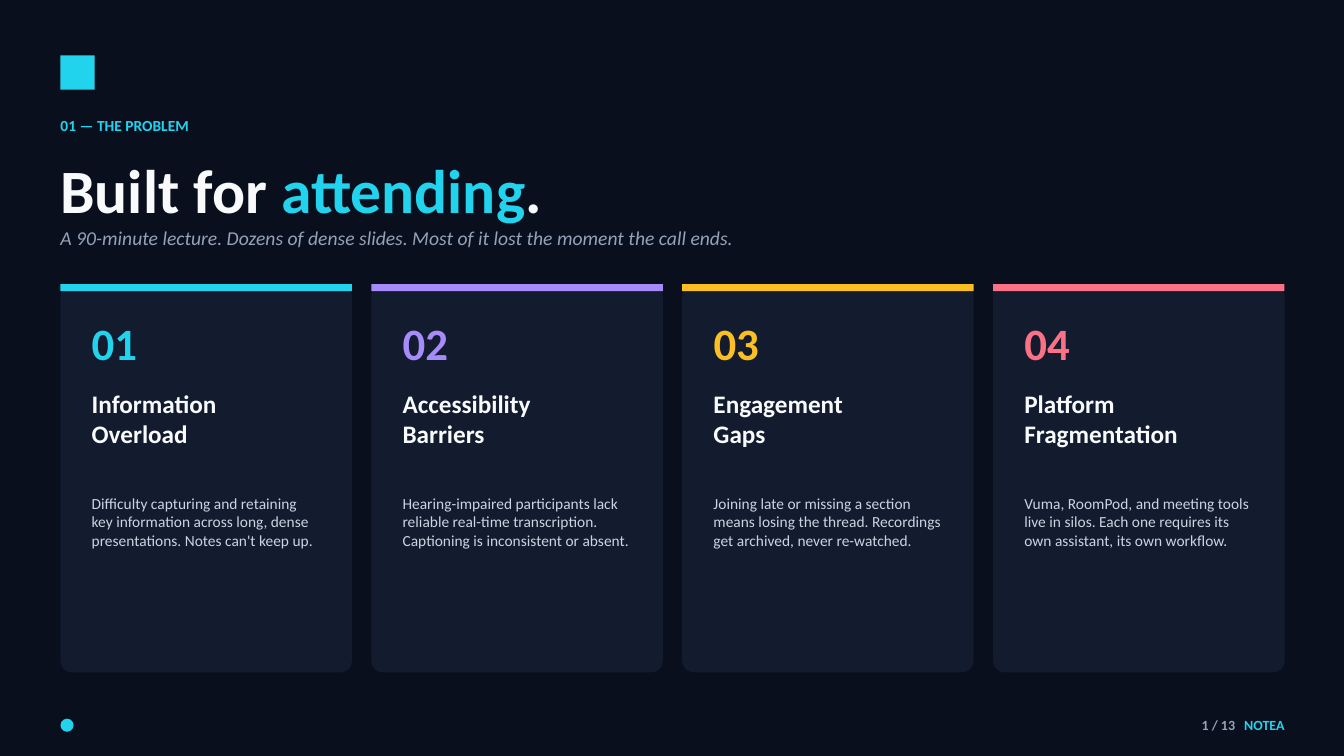
import pptx
import pptx.dml.color
import pptx.enum.shapes
import pptx.enum.text
import pptx.util

Inches = pptx.util.Inches
Form = pptx.enum.shapes.MSO_SHAPE
Align = pptx.enum.text.PP_ALIGN
Anchor = pptx.enum.text.MSO_ANCHOR

CYAN = "22D3EE"
VIOLET = "A78BFA"
AMBER = "FBBF24"
ROSE = "FB7185"
WHITE = "F8FAFC"
GREY = "94A3B8"
PALE = "CBD5E1"
PANEL = "131B2E"
NIGHT = "0A0F1E"

CARDS = [
    ("Information\vOverload", CYAN,
     "Difficulty capturing and retaining key information across long, dense "
     "presentations. Notes can't keep up."),
    ("Accessibility\vBarriers", VIOLET,
     "Hearing-impaired participants lack reliable real-time transcription. "
     "Captioning is inconsistent or absent."),
    ("Engagement\vGaps", AMBER,
     "Joining late or missing a section means losing the thread. Recordings "
     "get archived, never re-watched."),
    ("Platform\vFragmentation", ROSE,
     "Vuma, RoomPod, and meeting tools live in silos. Each one requires its "
     "own assistant, its own workflow."),
]


def color(code):
    return pptx.dml.color.RGBColor.from_string(code)


class Deck:
    font = "Calibri"

    def __init__(self, show):
        self.slide = show.slides.add_slide(show.slide_layouts[6])
        fill = self.slide.background.fill
        fill.solid()
        fill.fore_color.rgb = color(NIGHT)

    def shape(self, form, left, top, width, height, tone):
        item = self.slide.shapes.add_shape(
            form, Inches(left), Inches(top), Inches(width), Inches(height))
        item.shadow.inherit = False
        item.fill.solid()
        item.fill.fore_color.rgb = color(tone)
        item.line.fill.background()
        return item

    def text(self, left, top, width, height, parts, size, bold=False,
             slant=False, align=Align.LEFT, anchor=Anchor.TOP):
        box = self.slide.shapes.add_textbox(
            Inches(left), Inches(top), Inches(width), Inches(height))
        frame = box.text_frame
        frame.margin_left = frame.margin_right = 0
        frame.margin_top = frame.margin_bottom = 0
        frame.word_wrap = True
        frame.auto_size = pptx.enum.text.MSO_AUTO_SIZE.SHAPE_TO_FIT_TEXT
        frame.vertical_anchor = anchor
        para = frame.paragraphs[0]
        para.alignment = align
        words, tone = parts[0]
        para.text = words
        tones = [tone] * len(para.runs)
        for words, tone in parts[1:]:
            para.add_run().text = words
            tones.append(tone)
        for run, tone in zip(para.runs, tones):
            run.font.name = self.font
            run.font.size = pptx.util.Pt(size)
            run.font.bold = bold
            run.font.italic = slant
            run.font.color.rgb = color(tone)

    def card(self, left, rank, title, tone, body):
        panel = self.shape(Form.ROUNDED_RECTANGLE, left, 2.82, 2.89, 3.85, PANEL)
        panel.adjustments[0] = 0.04
        self.shape(Form.RECTANGLE, left, 2.82, 2.89, 0.07, tone)
        inner = left + 0.31
        self.text(inner, 3.13, 0.98, 0.55, [(f"{rank:02d}", tone)], 32, bold=True)
        self.text(inner, 3.85, 2.27, 0.87, [(title, WHITE)], 18, bold=True)
        self.text(inner, 4.9, 2.27, 1.64, [(body, PALE)], 11)

    def foot(self, right, words, tone):
        self.text(right - 1, 7.04, 1, 0.31, [(words, tone)], 10, bold=True,
                  align=Align.RIGHT, anchor=Anchor.MIDDLE)


def main():
    show = pptx.Presentation()
    show.slide_width = Inches(13.33)
    show.slide_height = Inches(7.5)
    deck = Deck(show)
    deck.shape(Form.RECTANGLE, 0.6, 0.55, 0.34, 0.34, CYAN)
    deck.text(0.6, 1.15, 8, 0.3, [("01 — THE PROBLEM", CYAN)], 11, bold=True)
    deck.text(0.6, 1.51, 12.03, 0.74,
              [("Built for ", WHITE), ("attending", CYAN), (".", WHITE)],
              44, bold=True)
    deck.text(0.6, 2.24, 12.03, 0.31,
              [("A 90-minute lecture. Dozens of dense slides. "
                "Most of it lost the moment the call ends.", GREY)],
              14, slant=True)
    step = (9.85 - 0.6) / 3
    for spot, (title, tone, body) in enumerate(CARDS):
        deck.card(0.6 + spot * step, spot + 1, title, tone, body)
    deck.shape(Form.OVAL, 0.6, 7.13, 0.13, 0.13, CYAN)
    deck.foot(12.25, "1 / 13", GREY)
    deck.foot(12.74, "NOTEA", CYAN)
    show.save("out.pptx")


if __name__ == "__main__":
    main()
